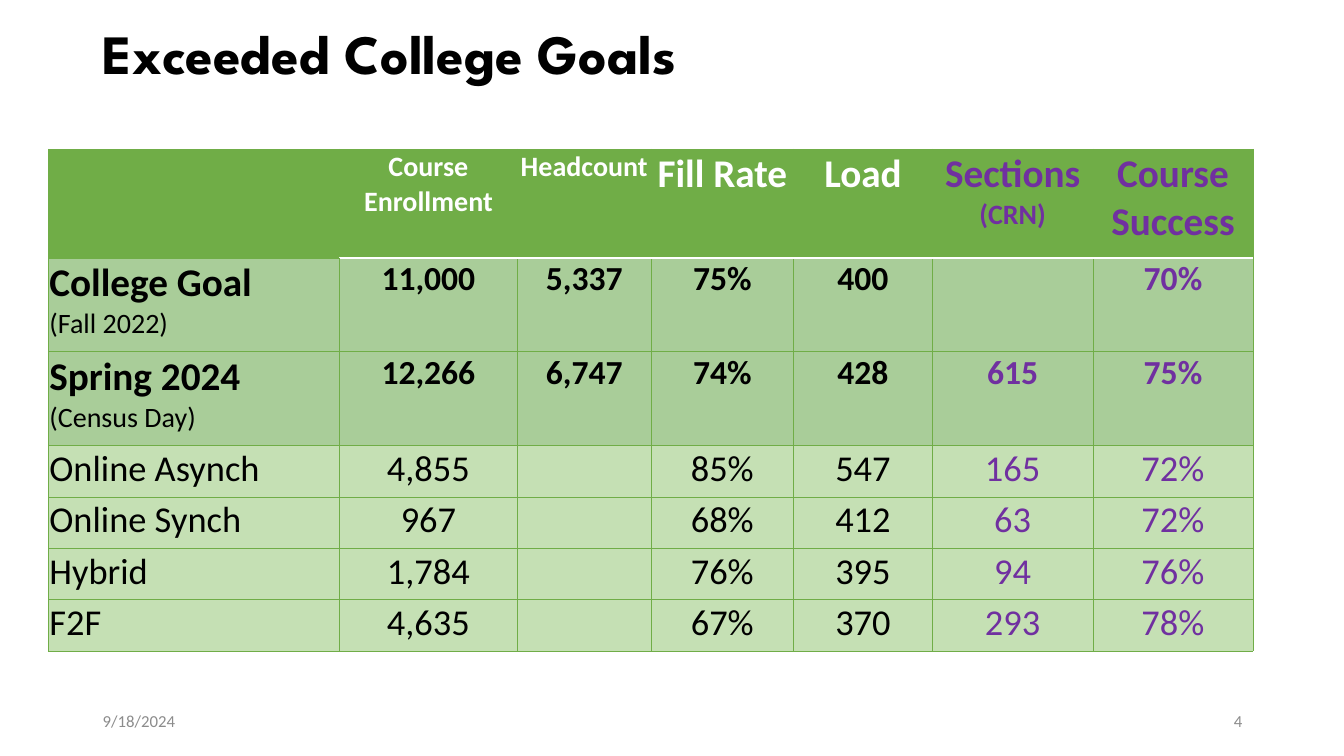
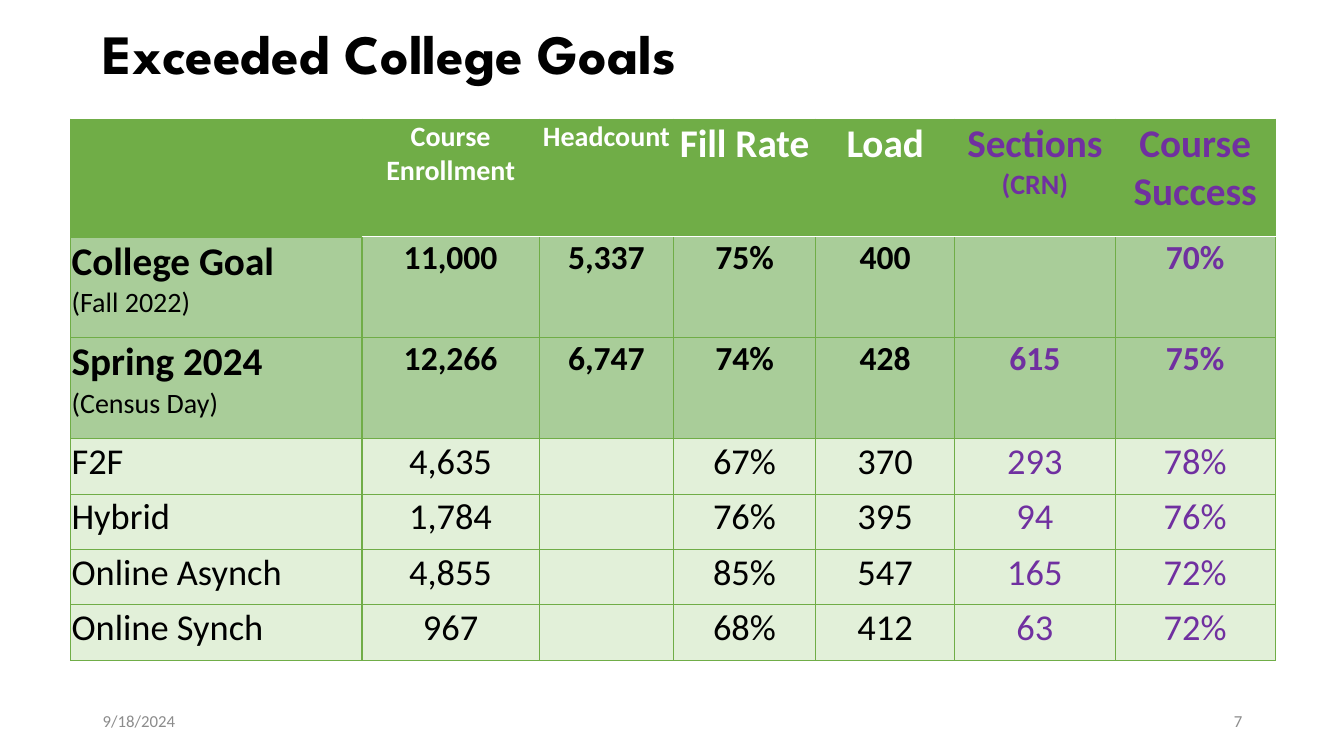
import pptx
import pptx.dml.color
import pptx.enum.text
import pptx.util
from lxml import etree
import pptx.oxml.ns

Inches = pptx.util.Inches
RGBColor = pptx.dml.color.RGBColor
PP_ALIGN = pptx.enum.text.PP_ALIGN
MIDDLE = pptx.enum.text.MSO_ANCHOR.MIDDLE
qn = pptx.oxml.ns.qn

BLACK = RGBColor(0x00, 0x00, 0x00)
WHITE = RGBColor(0xFF, 0xFF, 0xFF)
GRAY = RGBColor(0x8C, 0x8C, 0x8C)
PURPLE = RGBColor(0x70, 0x30, 0xA0)
GREEN = RGBColor(0x70, 0xAD, 0x47)
MID_GREEN = RGBColor(0xA9, 0xCD, 0x99)
LIGHT_GREEN = RGBColor(0xC5, 0xE0, 0xB4)
PALE_GREEN = RGBColor(0xE2, 0xF0, 0xD9)

TITLE = "Exceeded College Goals"
DATE = "9/18/2024"
COL_WIDTHS = [2.89, 1.76, 1.33, 1.41, 1.38, 1.59, 1.59]
FIRST_PURPLE_COL = 5

# Each cell is a list of paragraphs, each paragraph a list of (text, size) runs.
HEADER = [
    [],
    [[("Course Enrollment", 20)]],
    [[("Headcount", 20)]],
    [[("Fill Rate", 28)]],
    [[("Load", 28)]],
    [[("Sections ", 28), ("(CRN)", 20)]],
    [[("Course Success", 28)]],
]
GOALS = [
    ("College Goal", "(Fall 2022)", ["11,000", "5,337", "75%", "400", "", "70%"]),
    ("Spring 2024", "(Census Day)", ["12,266", "6,747", "74%", "428", "615", "75%"]),
]
MODES = {
    "Online Asynch": ["4,855", "", "85%", "547", "165", "72%"],
    "Online Synch": ["967", "", "68%", "412", "63", "72%"],
    "Hybrid": ["1,784", "", "76%", "395", "94", "76%"],
    "F2F": ["4,635", "", "67%", "370", "293", "78%"],
}
SLIDES = [
    dict(number="4", left=0.48, top=1.48, heights=(1.08, 0.93, 0.51), fill=LIGHT_GREEN,
         modes=["Online Asynch", "Online Synch", "Hybrid", "F2F"]),
    dict(number="7", left=0.7, top=1.18, heights=(1.17, 1, 0.55), fill=PALE_GREEN,
         modes=["F2F", "Hybrid", "Online Asynch", "Online Synch"]),
]


def add_run(p, text, size, color=BLACK, bold=False, font="Calibri", align=PP_ALIGN.LEFT):
    p.alignment = align
    r = p.add_run()
    r.text = text
    r.font.size = pptx.util.Pt(size)
    r.font.name = font
    r.font.bold = bold
    r.font.color.rgb = color


def set_border(cell, side, color, width):
    """Add one cell border; call in the order L, R, T, B and before the fill."""
    ln = etree.SubElement(cell._tc.get_or_add_tcPr(), qn("a:ln" + side),
                          w=str(pptx.util.Pt(width)))
    fill = etree.SubElement(ln, qn("a:solidFill"))
    etree.SubElement(fill, qn("a:srgbClr"), val=str(color))


prs = pptx.Presentation()
prs.slide_width, prs.slide_height = Inches(13.33), Inches(7.5)

for page in SLIDES:
    s = prs.slides.add_slide(prs.slide_layouts[5])
    title = s.shapes.title
    title.left, title.top = Inches(0.92), Inches(0.22)
    title.width, title.height = Inches(11.5), Inches(0.68)
    tf = title.text_frame
    tf.auto_size = pptx.enum.text.MSO_AUTO_SIZE.NONE
    tf.vertical_anchor = MIDDLE
    tf.paragraphs[0].line_spacing = 0.9
    add_run(tf.paragraphs[0], TITLE, 39.6, bold=True, font="League Spartan")

    header_height, goal_height, mode_height = page["heights"]
    rows = [(header_height, GREEN, HEADER)]
    for name, note, values in GOALS:
        cells = [[[(name, 28)], [(note, 20)]]] + [[[(v, 24)]] if v else [] for v in values]
        rows.append((goal_height, MID_GREEN, cells))
    for name in page["modes"]:
        cells = [[[(v, 26)]] if v else [] for v in [name] + MODES[name]]
        rows.append((mode_height, page["fill"], cells))

    table = s.shapes.add_table(
        len(rows), len(COL_WIDTHS), Inches(page["left"]), Inches(page["top"]),
        Inches(sum(COL_WIDTHS)), Inches(sum(row[0] for row in rows))).table
    table.horz_banding = False
    for column, width in zip(table.columns, COL_WIDTHS):
        column.width = Inches(width)

    for i, (height, fill, cells) in enumerate(rows):
        table.rows[i].height = Inches(height)
        for j, paragraphs in enumerate(cells):
            cell = table.cell(i, j)
            cell.margin_left = cell.margin_right = cell.margin_top = Inches(0.01)
            cell.margin_bottom = 0
            under_header = i == 1 and j > 0
            set_border(cell, "L", GREEN, 1 if i > 0 and j == 1 else 0.5)
            set_border(cell, "R", GREEN, 1 if i > 0 and j == 0 else 0.5)
            set_border(cell, "T", WHITE if under_header else GREEN, 1 if under_header else 0.5)
            white_bottom = i == 0 and j > 0
            set_border(cell, "B", WHITE if white_bottom else GREEN, 1 if white_bottom else 0.5)
            cell.fill.solid()
            cell.fill.fore_color.rgb = fill

            color = PURPLE if j >= FIRST_PURPLE_COL else WHITE if i == 0 else BLACK
            tf = cell.text_frame
            for k, runs in enumerate(paragraphs):
                p = tf.paragraphs[0] if k == 0 else tf.add_paragraph()
                for text, size in runs:
                    add_run(p, text, size, color, bold=i <= len(GOALS) and k == 0,
                            align=PP_ALIGN.CENTER if j else PP_ALIGN.LEFT)

    for left, text, align in [(0.92, DATE, PP_ALIGN.LEFT), (9.42, page["number"], PP_ALIGN.RIGHT)]:
        tf = s.shapes.add_textbox(Inches(left), Inches(6.95), Inches(3), Inches(0.4)).text_frame
        tf.word_wrap = True
        tf.vertical_anchor = MIDDLE
        add_run(tf.paragraphs[0], text, 12, GRAY, align=align)

prs.save("out.pptx")
